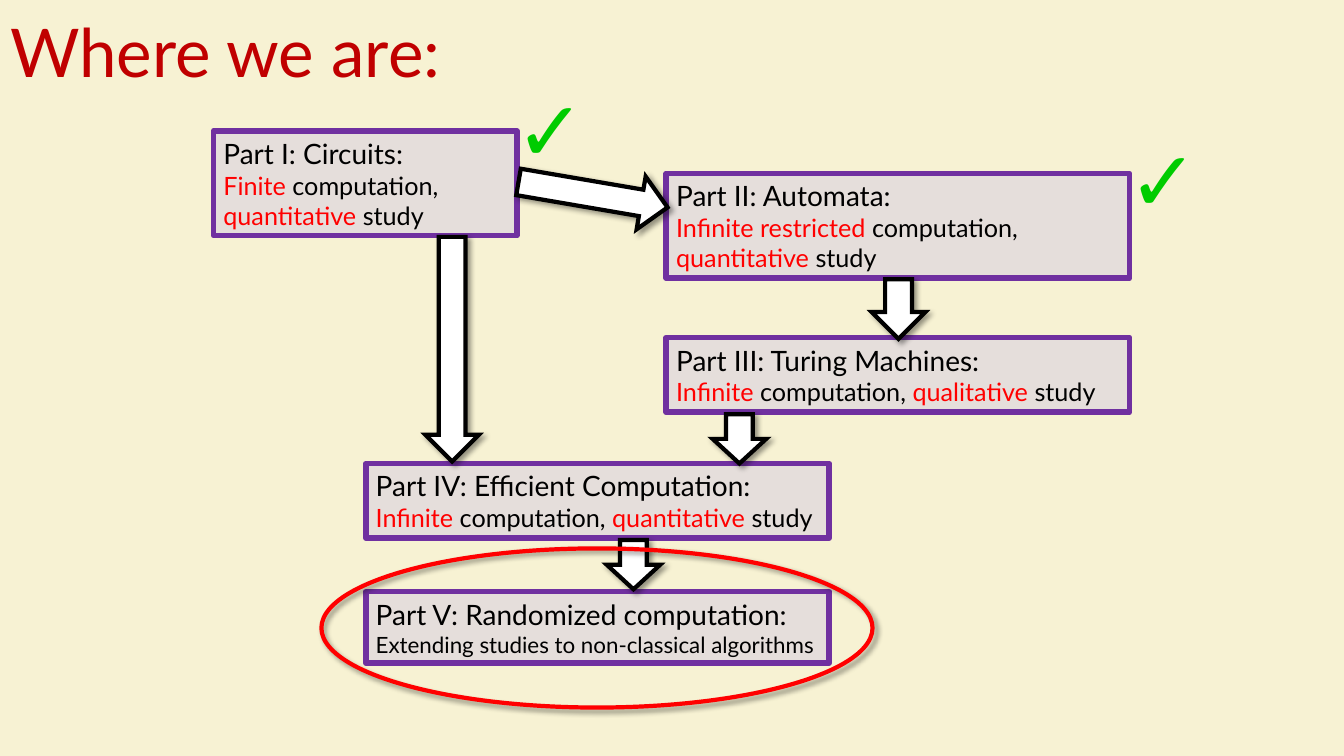
from lxml.etree import SubElement
from pptx import Presentation
from pptx.dml.color import RGBColor
from pptx.enum.shapes import MSO_SHAPE as Shape
from pptx.enum.text import MSO_ANCHOR as Anchor, MSO_AUTO_SIZE as AutoSize, PP_ALIGN as Align
from pptx.oxml.ns import qn
from pptx.util import Cm, Pt

CREAM = RGBColor(0xF7, 0xF2, 0xD3)
DARK_RED = RGBColor(0xC0, 0x00, 0x00)
RED = RGBColor(0xFF, 0x00, 0x00)
GREEN = RGBColor(0x00, 0xCC, 0x00)
PURPLE = RGBColor(0x70, 0x30, 0xA0)
GREY = RGBColor(0xE5, 0xDE, 0xDB)
BLACK = RGBColor(0x00, 0x00, 0x00)
WHITE = RGBColor(0xFF, 0xFF, 0xFF)

FONT = "Lato"
WIDE = 11.68
ARROW_WIDTH = 1.35

PARTS = [
    ((5.38, 3.3, 7.65, 2.64), "Part I: Circuits:", 18,
     [[("Finite", RED), (" computation,", BLACK)],
      [("quantitative", RED), (" study", BLACK)]]),
    ((16.79, 4.37, WIDE, 2.64), "Part II: Automata:", 18,
     [[("Infinite restricted", RED), (" computation, ", BLACK),
       ("quantitative", RED), (" study", BLACK)]]),
    ((16.79, 8.51, WIDE, 1.88), "Part III: Turing Machines:", 18,
     [[("Infinite", RED), (" computation, ", BLACK),
       ("qualitative", RED), (" study", BLACK)]]),
    ((9.22, 11.68, WIDE, 1.88), "Part IV: Efficient Computation:", 18,
     [[("Infinite", RED), (" computation, ", BLACK),
       ("quantitative", RED), (" study", BLACK)]]),
    ((9.22, 14.91, WIDE, 1.8), "Part V: Randomized computation:", 16,
     [[("Extending studies to non-classical algorithms", BLACK)]]),
]

ARROWS = [
    (17.96, 10.44, 1.24, 0),
    (15.29, 13.61, 1.24, 0),
    (14.27, 3, 3.81, 279.7),
    (21.97, 7.04, 1.5, 0),
    (10.72, 5.97, 5.66, 0),
]

CHECKS = [(28.19, 3.1), (12.73, 1.83)]


def add_span(para, text, size, color):
    """Append one formatted run to a paragraph."""
    span = para.add_run()
    span.text = text
    span.font.name = FONT
    span.font.size = Pt(size)
    span.font.color.rgb = color


def add_outlined(page, kind, place, line_color, line_width, fill=None):
    """Add a preset shape with an outline, an optional fill and no shadow."""
    shape = page.shapes.add_shape(kind, *map(Cm, place))
    shape.shadow.inherit = False
    if fill is None:
        shape.fill.background()
    else:
        shape.fill.solid()
        shape.fill.fore_color.rgb = fill
    shape.line.color.rgb = line_color
    shape.line.width = Pt(line_width)
    return shape


def add_shadow(shape):
    """Give a shape a soft shadow to the lower right."""
    effects = shape._element.spPr.find(qn("a:effectLst"))
    shadow = SubElement(effects, qn("a:outerShdw"), blurRad=str(Pt(4)),
                        dist=str(Pt(3)), dir="2700000", algn="tl", rotWithShape="0")
    color = SubElement(shadow, qn("a:srgbClr"), val=str(BLACK))
    SubElement(color, qn("a:alpha"), val="40000")


def add_title(page, text):
    """Place and format the title placeholder."""
    title = page.shapes.title
    title.left, title.top, title.width, title.height = map(Cm, (0, 0, 33.87, 2.82))
    title.text_frame.vertical_anchor = Anchor.MIDDLE
    para = title.text_frame.paragraphs[0]
    para.alignment = Align.LEFT
    para.line_spacing = 0.9
    add_span(para, text, 48, DARK_RED)


def add_part(page, place, heading, size, lines):
    """Add the box of one course part, with its heading and description."""
    box = add_outlined(page, Shape.RECTANGLE, place, PURPLE, 4, GREY)
    frame = box.text_frame
    frame.word_wrap = True
    frame.auto_size = AutoSize.SHAPE_TO_FIT_TEXT
    para = frame.paragraphs[0]
    para.alignment = Align.LEFT
    add_span(para, heading, 20, BLACK)
    for line in lines:
        para = frame.add_paragraph()
        para.alignment = Align.LEFT
        for text, color in line:
            add_span(para, text, size, color)


def add_arrow(page, left, top, length, rotation):
    """Add a block arrow with sharp corners and a shadow."""
    place = (left, top, ARROW_WIDTH, length)
    arrow = add_outlined(page, Shape.DOWN_ARROW, place, BLACK, 3, WHITE)
    arrow.rotation = rotation
    SubElement(arrow._element.spPr.find(qn("a:ln")), qn("a:miter"), lim="800000")
    add_shadow(arrow)


def add_check(page, left, top):
    """Add a green check mark for a finished part."""
    box = page.shapes.add_textbox(*map(Cm, (left, top, 2.18, 2.82)))
    box.text_frame.word_wrap = False
    box.text_frame.auto_size = AutoSize.SHAPE_TO_FIT_TEXT
    add_span(box.text_frame.paragraphs[0], "✓", 60, GREEN)


def main():
    """Build the course overview slide and save it."""
    deck = Presentation()
    deck.slide_width, deck.slide_height = Cm(33.87), Cm(19.05)
    page = deck.slides.add_slide(deck.slide_layouts[5])
    page.background.fill.solid()
    page.background.fill.fore_color.rgb = CREAM
    add_title(page, "Where we are:")
    for part in PARTS:
        add_part(page, *part)
    for arrow in ARROWS:
        add_arrow(page, *arrow)
    for check in CHECKS:
        add_check(page, *check)
    add_shadow(add_outlined(page, Shape.OVAL, (8.1, 13.82, 13.89, 4.01), RED, 3))
    deck.save("out.pptx")


if __name__ == "__main__":
    main()
